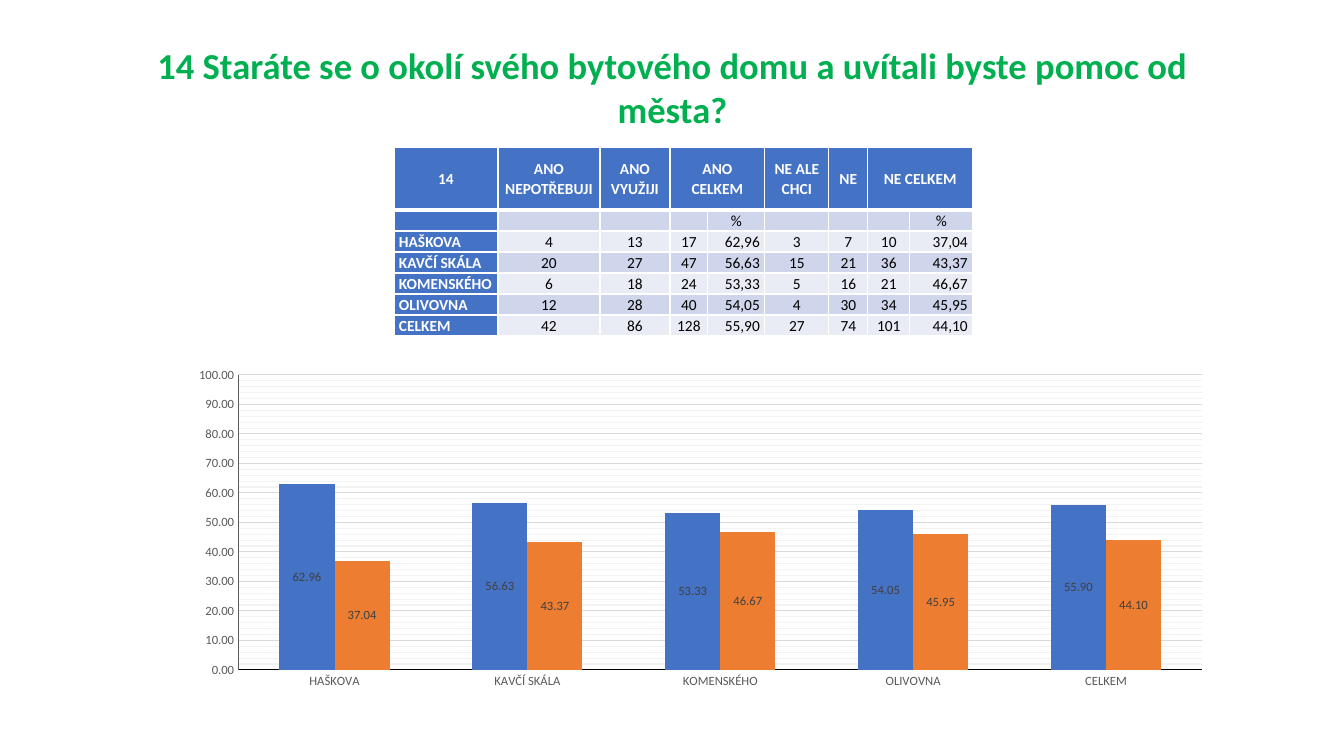
import pptx
import pptx.chart.data
import pptx.dml.color
import pptx.enum.chart
import pptx.enum.text
import pptx.oxml.ns
import pptx.util
from lxml import etree

FONT = "Calibri"
PX_PER_INCH = 100.8
COLORS = {
    "title": "00B050", "white": "FFFFFF", "black": "000000",
    "blue": "4472C4", "orange": "ED7D31",
    "band_dark": "CFD5EA", "band_light": "E9EBF5",
    "axis_text": "595959", "label": "404040",
    "grid": "D9D9D9", "minor_grid": "F2F2F2",
}
HEADER = ["14", "ANO NEPOTŘEBUJI", "ANO VYUŽIJI", "ANO CELKEM", "",
          "NE ALE CHCI", "NE", "NE CELKEM", ""]
UNITS = ["", "", "", "", "%", "", "", "", "%"]
ANSWERS = [
    ["HAŠKOVA", "4", "13", "17", "62,96", "3", "7", "10", "37,04"],
    ["KAVČÍ SKÁLA", "20", "27", "47", "56,63", "15", "21", "36", "43,37"],
    ["KOMENSKÉHO", "6", "18", "24", "53,33", "5", "16", "21", "46,67"],
    ["OLIVOVNA", "12", "28", "40", "54,05", "4", "30", "34", "45,95"],
    ["CELKEM", "42", "86", "128", "55,90", "27", "74", "101", "44,10"],
]
YES_PERCENT, NO_PERCENT = 4, 8
COLUMN_WIDTHS = [104, 102, 70, 38, 57, 64, 39, 42, 63]
ROW_HEIGHTS = [63] + [21] * 6
ALIGN = pptx.enum.text.PP_ALIGN
ANCHOR = pptx.enum.text.MSO_ANCHOR


def px(length):
    return pptx.util.Emu(round(length * 914400 / PX_PER_INCH))


def rgb(name):
    return pptx.dml.color.RGBColor.from_string(COLORS[name])


def style_font(font, size, color, bold=False):
    font.name = FONT
    font.size = pptx.util.Pt(size)
    font.bold = bold
    font.color.rgb = rgb(color)


def style_line(line, color):
    line.color.rgb = rgb(color)
    line.width = pptx.util.Pt(0.75)


def add_line(parent, tag, points, color):
    """Append a solid line element to an XML parent."""
    qn = pptx.oxml.ns.qn
    line = etree.SubElement(parent, qn(tag), w=str(int(pptx.util.Pt(points))))
    fill = etree.SubElement(line, qn("a:solidFill"))
    etree.SubElement(fill, qn("a:srgbClr"), val=COLORS[color])


class SurveySlide:
    def __init__(self, deck):
        self.page = deck.slides.add_slide(deck.slide_layouts[5])

    def title(self, text, left, top, width, height):
        box = self.page.shapes.title
        box.left, box.top, box.width, box.height = map(px, (left, top, width, height))
        frame = box.text_frame
        frame.text = text
        frame.word_wrap = True
        frame.auto_size = pptx.enum.text.MSO_AUTO_SIZE.NONE
        frame.vertical_anchor = ANCHOR.MIDDLE
        para = frame.paragraphs[0]
        para.alignment = ALIGN.CENTER
        para.line_spacing = 1.0
        style_font(para.runs[0].font, 26.1, "title", True)

    def table(self, rows, left, top):
        table = self.page.shapes.add_table(
            len(rows), len(COLUMN_WIDTHS), px(left), px(top),
            px(sum(COLUMN_WIDTHS)), px(sum(ROW_HEIGHTS))).table
        for column, width in zip(table.columns, COLUMN_WIDTHS):
            column.width = px(width)
        for row, height in zip(table.rows, ROW_HEIGHTS):
            row.height = px(height)
        for r, texts in enumerate(rows):
            for c, text in enumerate(texts):
                self.cell(table.cell(r, c), r, c, text)
        for c in (3, 7):
            table.cell(0, c).merge(table.cell(0, c + 1))

    def cell(self, cell, r, c, text):
        is_heading = r == 0 or c == 0
        self.borders(cell, top=3 if r == 1 else 1, bottom=3 if r == 0 else 1)
        band = "band_dark" if r % 2 else "band_light"
        cell.fill.solid()
        cell.fill.fore_color.rgb = rgb("blue" if is_heading else band)
        cell.margin_left = cell.margin_right = px(5)
        cell.margin_top = cell.margin_bottom = 0
        cell.vertical_anchor = ANCHOR.MIDDLE if r == 0 else ANCHOR.BOTTOM
        para = cell.text_frame.paragraphs[0]
        if not text:
            etree.SubElement(para._p, pptx.oxml.ns.qn("a:endParaRPr"), sz="1100")
            return
        para.text = text
        para.line_spacing = 1.07
        para.space_after = pptx.util.Pt(8)
        if r and c == 0:
            para.alignment = ALIGN.LEFT
        elif r > 1 and c in (YES_PERCENT, NO_PERCENT):
            para.alignment = ALIGN.RIGHT
        else:
            para.alignment = ALIGN.CENTER
        for span in para.runs:
            style_font(span.font, 11, "white" if is_heading else "black", is_heading)

    def borders(self, cell, top, bottom):
        properties = cell._tc.get_or_add_tcPr()
        for side, points in (("L", 1), ("R", 1), ("T", top), ("B", bottom)):
            add_line(properties, f"a:ln{side}", points, "white")

    def column_chart(self, categories, series, left, top, width, height):
        data = pptx.chart.data.CategoryChartData(number_format="0.00")
        data.categories = categories
        for name, values, _ in series:
            data.add_series(name, values)
        chart = self.page.shapes.add_chart(
            pptx.enum.chart.XL_CHART_TYPE.COLUMN_CLUSTERED,
            px(left), px(top), px(width), px(height), data).chart
        chart.has_title = chart.has_legend = False
        style_font(chart.font, 10, "black")
        plot = chart.plots[0]
        plot.gap_width, plot.overlap = 150, 0
        plot.vary_by_categories = False
        for bars, (_, _, color) in zip(plot.series, series):
            bars.format.fill.solid()
            bars.format.fill.fore_color.rgb = rgb(color)
            labels = bars.data_labels
            labels.show_value = True
            labels.position = pptx.enum.chart.XL_LABEL_POSITION.CENTER
            labels.number_format = "0.00"
            labels.number_format_is_linked = False
            style_font(labels.font, 9, "label")
        self.axes(chart)
        self.plot_area(chart, x=0.098, y=0.067, w=0.843, h=0.791)

    def axes(self, chart):
        for axis, color in ((chart.category_axis, "black"),
                            (chart.value_axis, "axis_text")):
            axis.major_tick_mark = axis.minor_tick_mark = pptx.enum.chart.XL_TICK_MARK.NONE
            style_font(axis.tick_labels.font, 9, "axis_text")
            style_line(axis.format.line, color)
        scale = chart.value_axis
        scale.minimum_scale, scale.maximum_scale = 0, 100
        scale.major_unit, scale.minor_unit = 10, 2
        scale.tick_labels.number_format = "0.00"
        scale.tick_labels.number_format_is_linked = False
        scale.has_major_gridlines = scale.has_minor_gridlines = True
        style_line(scale.major_gridlines.format.line, "grid")
        qn = pptx.oxml.ns.qn
        minor_grid = chart._chartSpace.find(f".//{qn('c:minorGridlines')}")
        add_line(etree.SubElement(minor_grid, qn("c:spPr")), "a:ln", 0.75, "minor_grid")

    def plot_area(self, chart, **fractions):
        """Fix the inner plot area as fractions of the chart."""
        qn = pptx.oxml.ns.qn
        area = chart._chartSpace.find(f".//{qn('c:plotArea')}")
        for layout in area.findall(qn("c:layout")):
            area.remove(layout)
        layout = etree.Element(qn("c:layout"))
        area.insert(0, layout)
        manual = etree.SubElement(layout, qn("c:manualLayout"))
        settings = {"layoutTarget": "inner", "xMode": "edge", "yMode": "edge", **fractions}
        for tag, value in settings.items():
            etree.SubElement(manual, qn(f"c:{tag}"), val=str(value))


def percentages(column):
    return [float(row[column].replace(",", ".")) for row in ANSWERS]


def main():
    deck = pptx.Presentation()
    deck.slide_width, deck.slide_height = px(1344), px(756)
    slide = SurveySlide(deck)
    slide.title("14 Staráte se o okolí svého bytového domu a uvítali byste pomoc od města?",
                93, 40, 1159, 94)
    slide.table([HEADER, UNITS] + ANSWERS, 394, 147)
    slide.column_chart([row[0] for row in ANSWERS],
                       [("Series 1", percentages(YES_PERCENT), "blue"),
                        ("Series 2", percentages(NO_PERCENT), "orange")],
                       126, 350, 1144, 373)
    deck.save("out.pptx")


if __name__ == "__main__":
    main()
